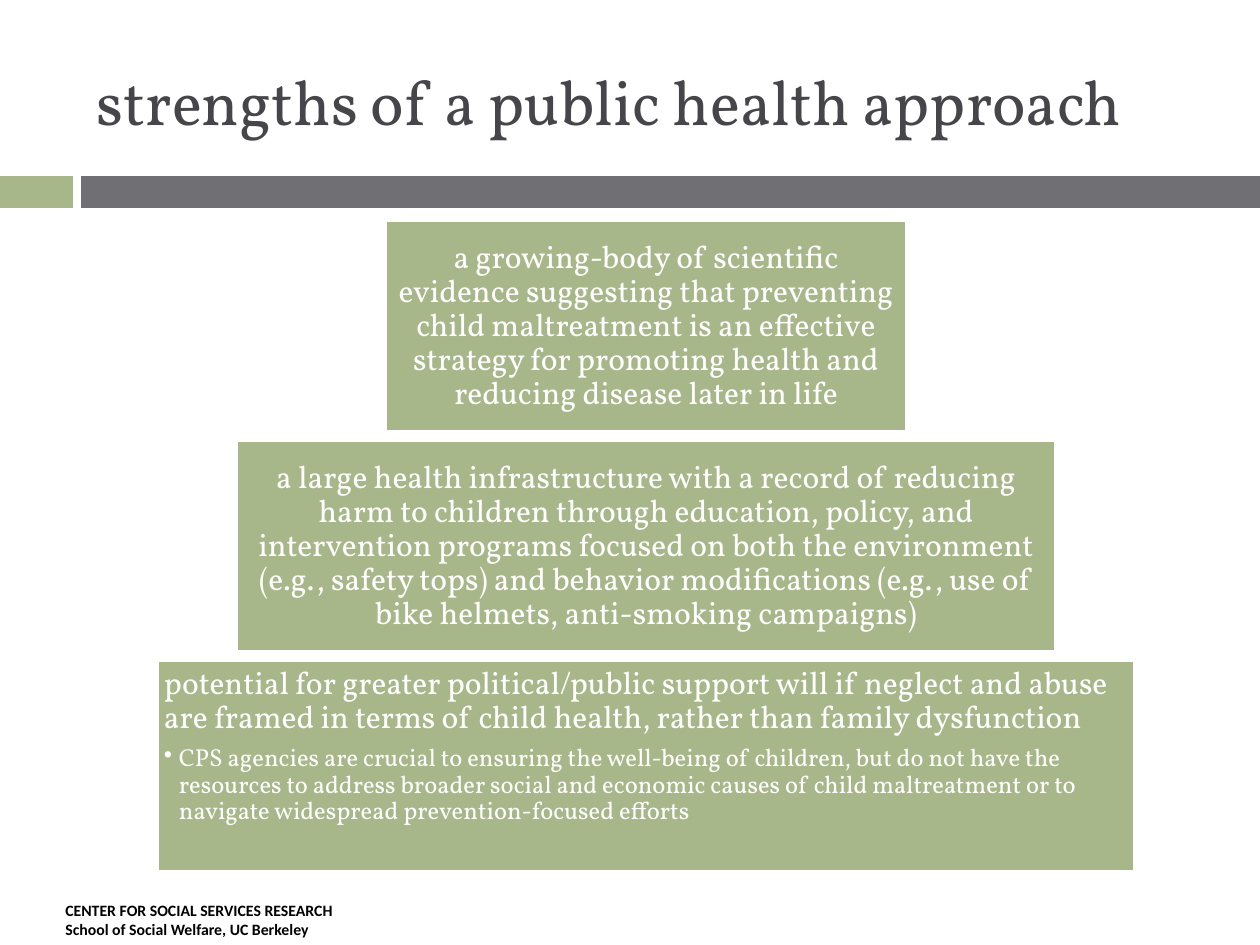
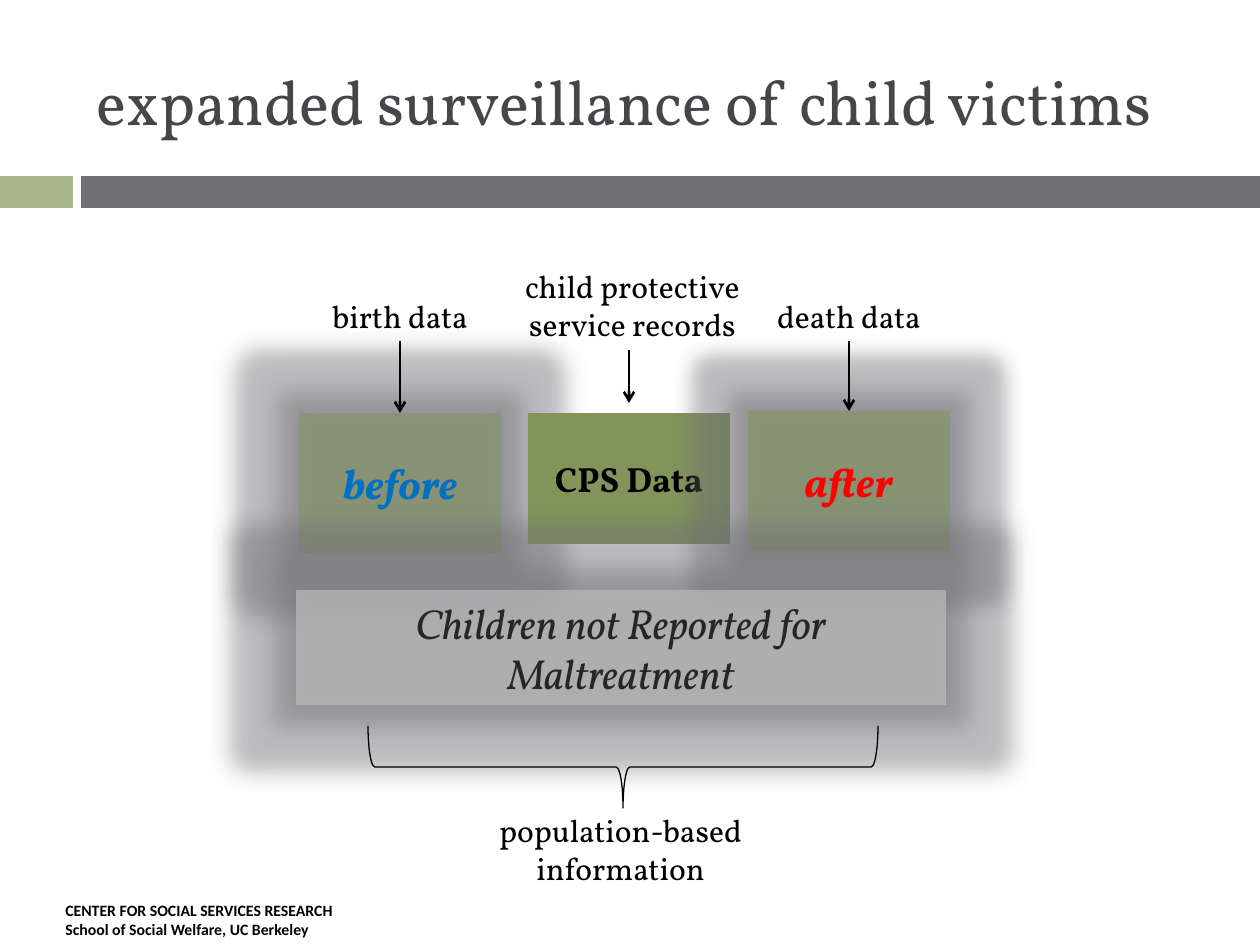
from lxml.etree import SubElement as Sub
from pptx import Presentation
from pptx.dml.color import RGBColor as RGB
from pptx.enum.shapes import MSO_CONNECTOR as LINE, MSO_SHAPE as SHAPE
from pptx.enum.text import MSO_ANCHOR as ANCHOR, MSO_AUTO_SIZE as FIT, PP_ALIGN as ALIGN
from pptx.oxml.ns import qn
from pptx.util import Pt

SCALE = 914400 / 126
SAGE = RGB(0xA7, 0xB7, 0x89)
OLIVE = RGB(0x81, 0x95, 0x5B)
SLATE = RGB(0x6F, 0x6F, 0x74)
INK = RGB(0x46, 0x46, 0x4A)
SILVER = RGB(0xBF, 0xBF, 0xBF)
COAL = RGB(0x26, 0x26, 0x26)
BLUE = RGB(0x00, 0x70, 0xC0)
RED = RGB(0xFF, 0x00, 0x00)
BLACK = RGB(0, 0, 0)
WHITE = RGB(255, 255, 255)

HEAD = dict(name="Vollkorn", size=Pt(36), color=INK)
FOOT = dict(name="Calibri", size=Pt(9), color=BLACK, bold=True)
CLAIM = dict(name="Vollkorn", size=Pt(18), color=WHITE)
POINT = dict(CLAIM, size=Pt(14))
LABEL = dict(CLAIM, color=BLACK)
DATA = dict(LABEL, size=Pt(20), bold=True)
PHASE = dict(DATA, size=Pt(24), italic=True)
REST = dict(LABEL, size=Pt(24), color=COAL, italic=True)


def px(*nums):
    return [round(n * SCALE) for n in nums]


def style(para, look, align=ALIGN.CENTER, **form):
    para.alignment = align
    for key, val in form.items():
        setattr(para, key, val)
    for key, val in look.items():
        if key == "color":
            para.font.color.rgb = val
        else:
            setattr(para.font, key, val)


def write(shape, text, look, anchor=ANCHOR.MIDDLE, **form):
    frame = shape.text_frame
    frame.word_wrap = True
    frame.auto_size = FIT.NONE
    frame.vertical_anchor = anchor
    frame.text = text
    style(frame.paragraphs[0], look, **form)
    return frame


def rect(slide, box, fill, edge=None):
    shape = slide.shapes.add_shape(SHAPE.RECTANGLE, *px(*box))
    shape.shadow.inherit = False
    shape.fill.solid()
    shape.fill.fore_color.rgb = fill
    if edge is None:
        shape.line.fill.background()
    else:
        shape.line.color.rgb = edge
        shape.line.width = Pt(1.5)
    return shape


def label(slide, box, text, look=LABEL, align=ALIGN.CENTER):
    shape = slide.shapes.add_textbox(*px(*box))
    write(shape, text, look, ANCHOR.TOP, align=align)
    return shape


def tint(parent, color, alpha):
    node = Sub(parent, qn("a:srgbClr"), val=str(color))
    Sub(node, qn("a:alpha"), val=str(alpha * 1000))


def halo(shape, alpha, size):
    """Make the fill see-through and add a glow and a soft shadow."""
    props = shape._element.spPr
    color = props.find(qn("a:solidFill"))[0]
    Sub(color, qn("a:alpha"), val=str(alpha * 1000))
    effect = props.find(qn("a:effectLst"))
    tint(Sub(effect, qn("a:glow"), rad=str(Pt(size))), SLATE, 40)
    shade = Sub(effect, qn("a:outerShdw"), blurRad=str(Pt(9)), dist="0",
                dir="5400000", algn="ctr", rotWithShape="0")
    tint(shade, SLATE, 45)


def arrow(slide, x, top, end):
    line = slide.shapes.add_connector(LINE.STRAIGHT, *px(x, top, x, end))
    line.line.color.rgb = BLACK
    line.line.width = Pt(1.5)
    Sub(line.line._get_or_add_ln(), qn("a:tailEnd"), type="arrow")
    Sub(line._element.spPr, qn("a:effectLst"))
    return line


def base(deck, text):
    """Add a slide with its title, band and footer."""
    slide = deck.slides.add_slide(deck.slide_layouts[5])
    rect(slide, (0, 176, 73, 32), SAGE)
    rect(slide, (81, 176, 1179, 32), SLATE)
    label(slide, (53, 895, 368, 50),
          "CENTER FOR SOCIAL SERVICES RESEARCH\vSchool of Social Welfare, UC Berkeley",
          FOOT, ALIGN.LEFT)
    title = slide.shapes.title
    title.left, title.top, title.width, title.height = px(84, 32, 1124, 136)
    write(title, text, HEAD, align=ALIGN.LEFT)
    return slide


def bullet(frame, text):
    para = frame.add_paragraph()
    para.text = text
    props = para._p.get_or_add_pPr()
    inset = px(15)[0]
    props.set("marL", str(inset))
    props.set("indent", str(-inset))
    Sub(props, qn("a:buChar"), char="•")
    style(para, POINT, ALIGN.LEFT, line_spacing=0.9, space_after=Pt(2))


def steps(slide, box, claims):
    """Stack centred blocks, given as (width, text), and return their frames."""
    mid, top, high, gap = box
    frames = []
    for row, (wide, text) in enumerate(claims):
        spot = (mid - wide / 2, top + row * (high + gap), wide, high)
        shape = rect(slide, spot, SAGE, WHITE)
        frame = write(shape, text, CLAIM, line_spacing=0.9, space_after=Pt(6))
        for side in ("left", "top", "right", "bottom"):
            setattr(frame, "margin_" + side, px(6)[0])
        frames.append(frame)
    return frames


def strengths(deck):
    slide = base(deck, "strengths of a public health approach")
    last = steps(slide, (646, 221, 210, 10), [
        (520, "a growing-body of scientific evidence suggesting that preventing child "
              "maltreatment is an effective strategy for promoting health and reducing "
              "disease later in life"),
        (818, "a large health infrastructure with a record of reducing harm to children "
              "through education, policy, and intervention programs focused on both the "
              "environment (e.g., safety tops) and behavior modifications (e.g., use of "
              "bike helmets, anti-smoking campaigns)"),
        (976, "potential for greater political/public support will if neglect and abuse "
              "are framed in terms of child health, rather than family dysfunction"),
    ])[-1]
    last.vertical_anchor = ANCHOR.TOP
    last.paragraphs[0].alignment = ALIGN.LEFT
    bullet(last, "CPS agencies are crucial to ensuring the well-being of children, but do "
                 "not have the resources to address broader social and economic causes of "
                 "child maltreatment or to navigate widespread prevention-focused efforts")


def phase(slide, box, text, color, alpha, size, source, wide):
    """Draw a haloed block with its data source pointing at it."""
    left, top, width, high = box
    mid = left + width // 2
    block = rect(slide, box, OLIVE)
    halo(block, alpha, size)
    write(block, text, dict(PHASE, color=color))
    note = label(slide, (mid - wide // 2, 291, wide, 50), source)
    line = arrow(slide, mid, 341, top)
    line.begin_connect(note, 2)
    line.end_connect(block, 0)


def brace(slide, box):
    shape = slide.shapes.add_shape(SHAPE.RIGHT_BRACE, *px(*box))
    shape.rotation = 90
    shape.shadow.inherit = False
    shape.fill.background()
    shape.line.color.rgb = BLACK
    shape.line.width = Pt(0.75)


def victims(deck):
    slide = base(deck, "expanded surveillance of child victims")
    phase(slide, (299, 413, 202, 140), "before", BLUE, 53, 25, "birth data", 180)
    records = rect(slide, (528, 413, 202, 131), OLIVE)
    write(records, "CPS Data", DATA)
    phase(slide, (748, 411, 202, 140), "after", RED, 56, 22, "death data", 220)
    rest = rect(slide, (296, 590, 650, 115), SILVER)
    halo(rest, 66, 25)
    write(rest, "Children not Reported for Maltreatment", REST)
    brace(slide, (582, 512, 82, 510))
    label(slide, (417, 805, 407, 90), "population-based information")
    label(slide, (499, 261, 267, 90), "child protective service records")
    arrow(slide, 629, 350, 403)


def main():
    deck = Presentation()
    deck.slide_width, deck.slide_height = px(1260, 945)
    strengths(deck)
    victims(deck)
    deck.save("out.pptx")


if __name__ == "__main__":
    main()
